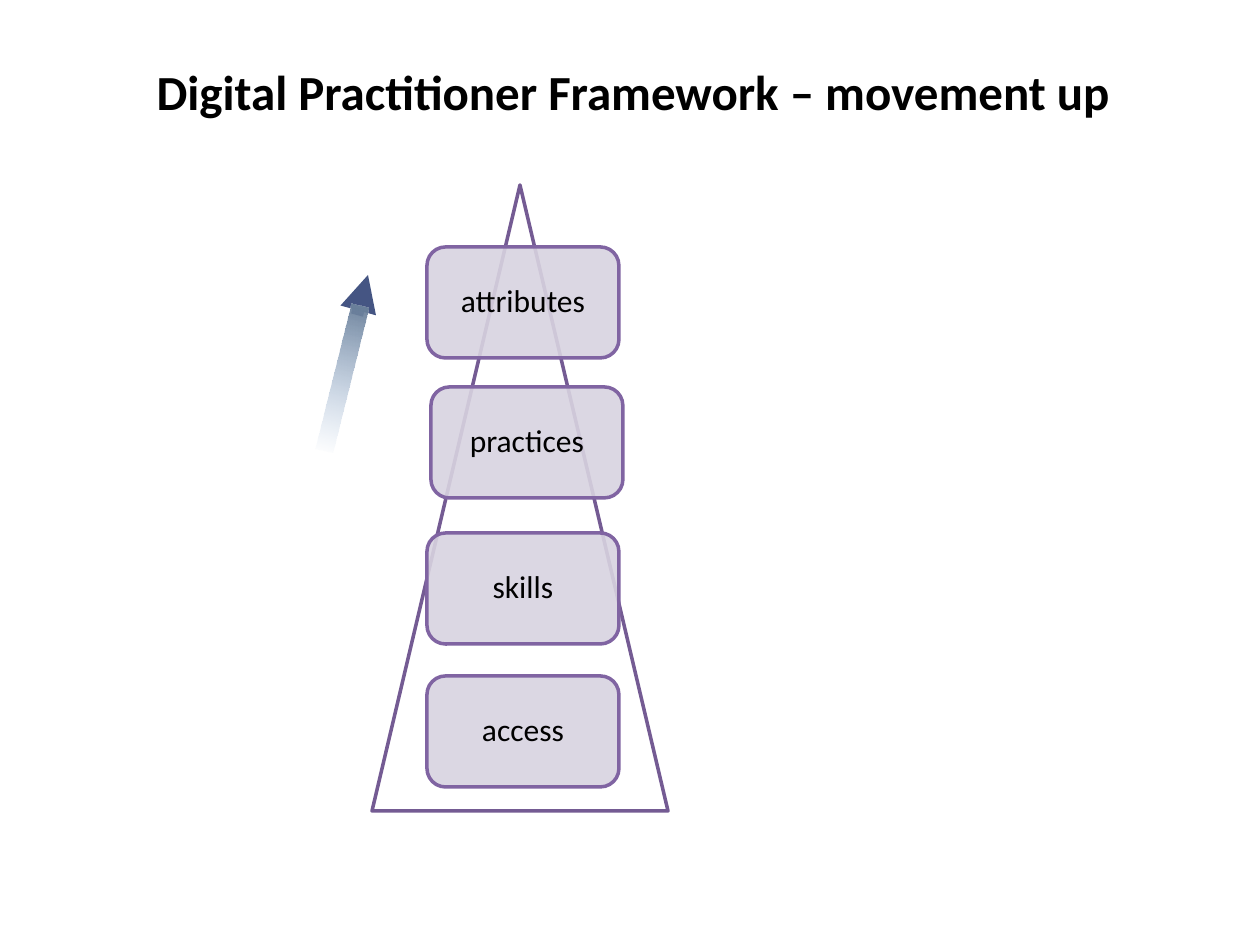
from dataclasses import dataclass

from lxml.etree import SubElement
from pptx import Presentation
from pptx.dml.color import RGBColor as RGB
from pptx.enum.shapes import MSO_CONNECTOR as CONNECTOR, MSO_SHAPE as SHAPE
from pptx.enum.text import MSO_ANCHOR as ANCHOR, MSO_AUTO_SIZE as AUTO_SIZE, PP_ALIGN as ALIGN
from pptx.oxml.ns import qn
from pptx.util import Inches, Pt

PX = Inches(1) / 126


@dataclass(frozen=True)
class Theme:
    font: str = "Calibri"
    title_size: int = 28
    level_size: int = 18
    line_width: int = 2
    text: RGB = RGB(0x00, 0x00, 0x00)
    paper: RGB = RGB(0xFF, 0xFF, 0xFF)
    pyramid_line: RGB = RGB(0x74, 0x5B, 0x93)
    level_fill: RGB = RGB(0xD8, 0xD3, 0xE0)
    level_line: RGB = RGB(0x80, 0x64, 0xA2)
    arrow_head: RGB = RGB(0x45, 0x55, 0x83)
    shaft_top: RGB = RGB(0x6B, 0x80, 0x9A)
    shaft_bottom: RGB = RGB(0x95, 0xB3, 0xD7)


THEME = Theme()

LEVELS = ["attributes", "practices", "skills", "access"]
LEVEL_LEFTS = [427, 431, 427, 427]
LEVEL_TOP, LEVEL_STEP = 247, 143
LEVEL_TOPS = [LEVEL_TOP + LEVEL_STEP * i for i in range(len(LEVELS))]
LEVEL_TOPS[1] -= 3  # practices sits slightly above the even step


def px(*lengths):
    return [round(n * PX) for n in lengths]


def set_alpha(color, percent):
    SubElement(color, qn("a:alpha")).set("val", str(percent * 1000))


def style_run(r, size, bold=False):
    r.font.name = THEME.font
    r.font.size = Pt(size)
    r.font.bold = bold
    r.font.color.rgb = THEME.text


def add_outlined_shape(slide, kind, box, fill, line):
    s = slide.shapes.add_shape(kind, *px(*box))
    s.shadow.inherit = False
    s.fill.solid()
    s.fill.fore_color.rgb = fill
    s.line.color.rgb = line
    s.line.width = Pt(THEME.line_width)
    return s


def set_title(slide, text):
    title = slide.shapes.title
    title.left, title.top, title.width, title.height = px(144, 55, 990, 72)
    tf = title.text_frame
    tf.text = text
    tf.word_wrap = False
    tf.auto_size = AUTO_SIZE.NONE
    tf.vertical_anchor = ANCHOR.TOP
    p = tf.paragraphs[0]
    p.alignment = ALIGN.LEFT
    style_run(p.runs[0], THEME.title_size, bold=True)


def add_level(slide, text, left, top):
    s = add_outlined_shape(slide, SHAPE.ROUNDED_RECTANGLE, (left, top, 192, 111),
                           THEME.level_fill, THEME.level_line)
    set_alpha(s.fill.fore_color._xFill.find(qn("a:srgbClr"))
              if hasattr(s.fill.fore_color, "_xFill")
              else s._element.spPr.find(qn("a:solidFill")).find(qn("a:srgbClr")), 90)
    tf = s.text_frame
    tf.text = text
    tf.word_wrap = True
    tf.vertical_anchor = ANCHOR.MIDDLE
    tf.margin_left = tf.margin_right = tf.margin_top = tf.margin_bottom = Inches(0.07)
    p = tf.paragraphs[0]
    p.alignment = ALIGN.CENTER
    p.line_spacing = 0.9
    p.space_after = Pt(6.3)
    style_run(p.runs[0], THEME.level_size)


def add_arrow_head(slide, start, end):
    s = slide.shapes.add_connector(CONNECTOR.STRAIGHT, *px(*start, *end))
    s.line.color.rgb = THEME.arrow_head
    s.line.width = Pt(7)
    SubElement(s.line._get_or_add_ln(), qn("a:tailEnd")).set("type", "triangle")
    SubElement(s._element.spPr, qn("a:effectLst"))


def add_fading_shaft(slide, box, rotation):
    """Add a tilted bar that fades to nothing at its foot."""
    s = slide.shapes.add_shape(SHAPE.RECTANGLE, *px(*box))
    s.rotation = rotation
    s.shadow.inherit = False
    s.line.fill.background()
    s.fill.gradient()
    s.fill.gradient_angle = 270
    top, bottom = s.fill.gradient_stops
    top.position, bottom.position = 0, 1
    top.color.rgb, bottom.color.rgb = THEME.shaft_top, THEME.shaft_bottom
    stops = s._element.spPr.findall(".//" + qn("a:gs"))
    set_alpha(stops[-1].find(qn("a:srgbClr")), 0)


def main():
    prs = Presentation()
    prs.slide_width, prs.slide_height = Inches(10), Inches(7.5)
    slide = prs.slides.add_slide(prs.slide_layouts[5])
    set_title(slide, "Digital Practitioner Framework – movement up")
    add_outlined_shape(slide, SHAPE.ISOSCELES_TRIANGLE, (372, 185, 296, 626),
                       THEME.paper, THEME.pyramid_line)
    for text, left, top in zip(LEVELS, LEVEL_LEFTS, LEVEL_TOPS):
        add_level(slide, text, left, top)
    add_arrow_head(slide, (357, 315), (368, 275))
    add_fading_shaft(slide, (333, 304, 18, 149), rotation=14)
    prs.save("out.pptx")


if __name__ == "__main__":
    main()
